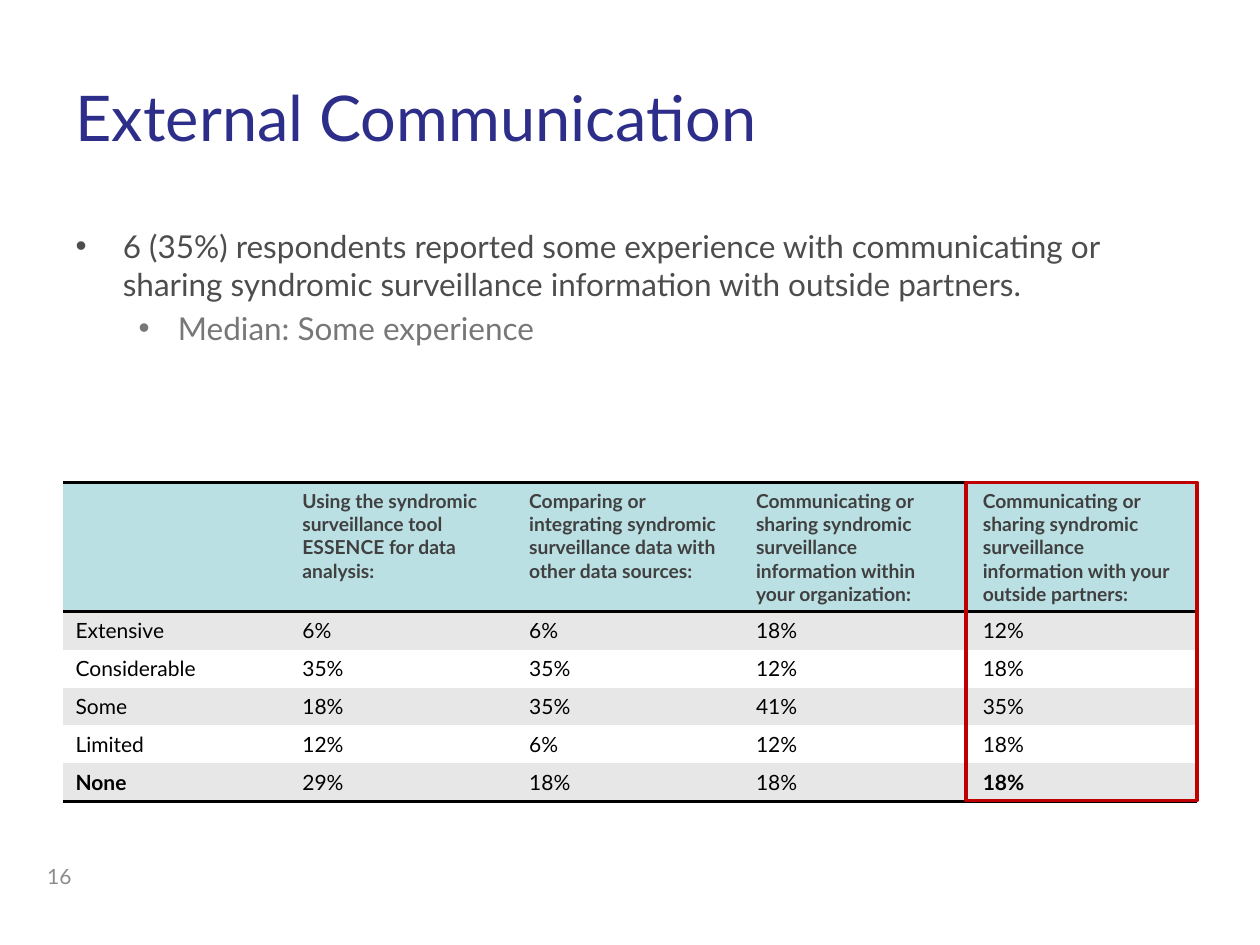
from dataclasses import dataclass

from lxml import etree
from pptx import Presentation
from pptx.dml.color import RGBColor
from pptx.enum.shapes import MSO_SHAPE
from pptx.enum.text import MSO_ANCHOR, MSO_AUTO_SIZE, PP_ALIGN
from pptx.oxml.ns import qn
from pptx.util import Pt

RECTANGLE = MSO_SHAPE.RECTANGLE
MIDDLE = MSO_ANCHOR.MIDDLE
TOP = MSO_ANCHOR.TOP
NO_AUTOFIT = MSO_AUTO_SIZE.NONE
LEFT = PP_ALIGN.LEFT
RIGHT = PP_ALIGN.RIGHT

FONT = "Lato"
COLORS = {
    "title": "2D2D8A",
    "bullet": "4D4D4D",
    "sub_bullet": "777777",
    "header_fill": "BBE0E3",
    "header_text": "404040",
    "band": "E7E7E7",
    "white": "FFFFFF",
    "black": "000000",
    "highlight": "C00000",
    "number": "8C8C8C",
}
NO_STYLE = "{2D5ABB26-0587-4C30-8999-92F81FD0307C}"

MARGIN = 36
CONTENT_WIDTH = 648
TABLE_TOP = 275.8
COLUMN_WIDTH = CONTENT_WIDTH / 5
HEADER_HEIGHT = 73.6
ROW_HEIGHT = 21.6
HIGHLIGHT_WIDTH = 132
RULE_WIDTH = 2


@dataclass
class Bullet:
    text: str
    level: int
    color: str
    indent: float
    hanging: float
    space_before: float


@dataclass
class Row:
    label: str
    values: tuple[str, ...]
    bold_columns: tuple[int, ...] = ()


BULLETS = (
    Bullet("6 (35%) respondents reported some experience with communicating or "
           "sharing syndromic surveillance information with outside partners.",
           0, "bullet", 27, 27, 0),
    Bullet("Median: Some experience", 1, "sub_bullet", 58.5, 22.5, 3.6),
)
HEADERS = (
    "",
    "Using the syndromic surveillance tool ESSENCE for data analysis:",
    "Comparing or integrating syndromic surveillance data with other data sources:",
    "Communicating or sharing syndromic surveillance information within your organization:",
    "Communicating or sharing syndromic surveillance information with your outside partners:",
)
ROWS = (
    Row("Extensive", ("6%", "6%", "18%", "12%")),
    Row("Considerable", ("35%", "35%", "12%", "18%")),
    Row("Some", ("18%", "35%", "41%", "35%")),
    Row("Limited", ("12%", "6%", "12%", "18%")),
    Row("None", ("29%", "18%", "18%", "18%"), bold_columns=(0, 4)),
)


def rgb(name: str) -> RGBColor:
    return RGBColor.from_string(COLORS[name])


def set_font(paragraph, size: float, color: str, bold: bool = False) -> None:
    font = paragraph.font
    font.name = FONT
    font.size = Pt(size)
    font.bold = bold
    font.color.rgb = rgb(color)


def place(shape, left: float, top: float, width: float, height: float) -> None:
    shape.left, shape.top = Pt(left), Pt(top)
    shape.width, shape.height = Pt(width), Pt(height)


def add_title(slide, text: str) -> None:
    title = slide.shapes.title
    place(title, MARGIN, 21.6, CONTENT_WIDTH, 90)
    frame = title.text_frame
    frame.text = text
    frame.auto_size = NO_AUTOFIT
    frame.vertical_anchor = MIDDLE
    paragraph = frame.paragraphs[0]
    paragraph.alignment = LEFT
    set_font(paragraph, 36, "title")


def add_bullets(slide, bullets: tuple[Bullet, ...]) -> None:
    body = slide.placeholders[1]
    place(body, MARGIN, 126, CONTENT_WIDTH, 378)
    frame = body.text_frame
    frame.text = "\n".join(bullet.text for bullet in bullets)
    frame.auto_size = NO_AUTOFIT
    frame.vertical_anchor = TOP
    for paragraph, bullet in zip(frame.paragraphs, bullets):
        paragraph.level = bullet.level
        properties = paragraph._p.get_or_add_pPr()
        properties.set("marL", str(Pt(bullet.indent)))
        properties.set("indent", str(-Pt(bullet.hanging)))
        etree.SubElement(properties, qn("a:buFont"), typeface="Arial")
        etree.SubElement(properties, qn("a:buChar"), char="•")
        paragraph.space_before = Pt(bullet.space_before)
        set_font(paragraph, 18, bullet.color)


def add_rule(cell, side: str, position: int) -> None:
    """Draw a black border on one side; borders must precede the cell's fill."""
    line = etree.Element(qn(f"a:{side}"), w=str(Pt(RULE_WIDTH)))
    fill = etree.SubElement(line, qn("a:solidFill"))
    etree.SubElement(fill, qn("a:srgbClr"), val=COLORS["black"])
    cell._tc.get_or_add_tcPr().insert(position, line)


def fill_cell(cell, text: str, fill: str, size: float, color: str, bold: bool) -> None:
    cell.text = text
    cell.fill.solid()
    cell.fill.fore_color.rgb = rgb(fill)
    set_font(cell.text_frame.paragraphs[0], size, color, bold)


def add_experience_table(slide) -> None:
    height = HEADER_HEIGHT + len(ROWS) * ROW_HEIGHT
    frame = slide.shapes.add_table(
        len(ROWS) + 1, len(HEADERS),
        Pt(MARGIN), Pt(TABLE_TOP), Pt(CONTENT_WIDTH), Pt(height))
    table = frame.table
    table.first_row = table.horz_banding = False
    frame.element.find(f".//{qn('a:tableStyleId')}").text = NO_STYLE
    for column in table.columns:
        column.width = Pt(COLUMN_WIDTH)
    for index, row in enumerate(table.rows):
        row.height = Pt(ROW_HEIGHT if index else HEADER_HEIGHT)

    for column, text in enumerate(HEADERS):
        cell = table.cell(0, column)
        fill_cell(cell, text, "header_fill", 11, "header_text", True)
        add_rule(cell, "lnT", 0)
        add_rule(cell, "lnB", 1)
    for index, row in enumerate(ROWS, start=1):
        fill = "band" if index % 2 else "white"
        for column, text in enumerate((row.label, *row.values)):
            cell = table.cell(index, column)
            fill_cell(cell, text, fill, 12, "black", column in row.bold_columns)
            if index == len(ROWS):
                add_rule(cell, "lnB", 0)

    highlight = slide.shapes.add_shape(
        RECTANGLE, Pt(MARGIN + CONTENT_WIDTH - HIGHLIGHT_WIDTH), Pt(TABLE_TOP),
        Pt(HIGHLIGHT_WIDTH), Pt(height))
    highlight.shadow.inherit = False
    highlight.fill.background()
    highlight.line.color.rgb = rgb("highlight")
    highlight.line.width = Pt(RULE_WIDTH)


def add_slide_number(slide, number: str) -> None:
    box = slide.shapes.add_textbox(Pt(12), Pt(486), Pt(36), Pt(28.8))
    frame = box.text_frame
    frame.word_wrap = True
    frame.vertical_anchor = MIDDLE
    frame.text = number
    paragraph = frame.paragraphs[0]
    paragraph.alignment = RIGHT
    set_font(paragraph, 12, "number")


def main() -> None:
    presentation = Presentation()
    presentation.slide_width, presentation.slide_height = Pt(720), Pt(540)
    slide = presentation.slides.add_slide(presentation.slide_layouts[1])
    add_title(slide, "External Communication")
    add_bullets(slide, BULLETS)
    add_experience_table(slide)
    add_slide_number(slide, "16")
    presentation.save("out.pptx")


if __name__ == "__main__":
    main()
